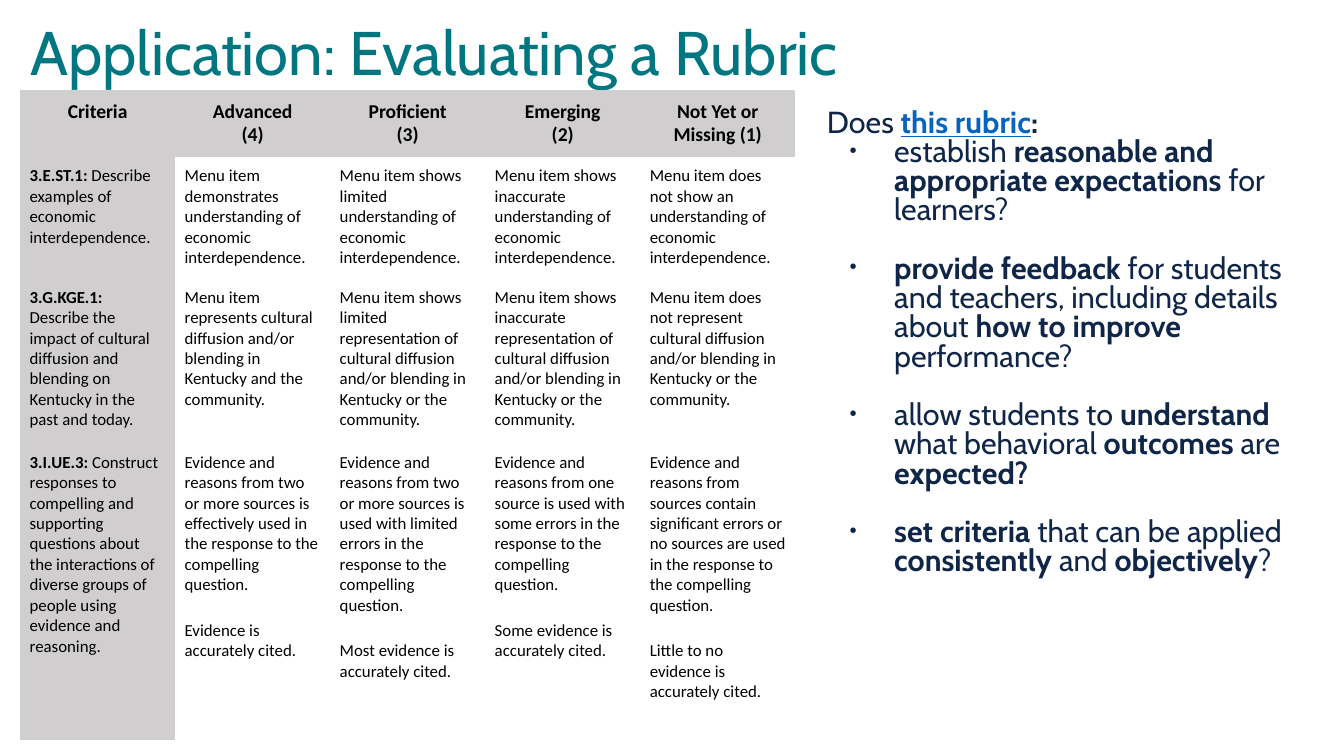
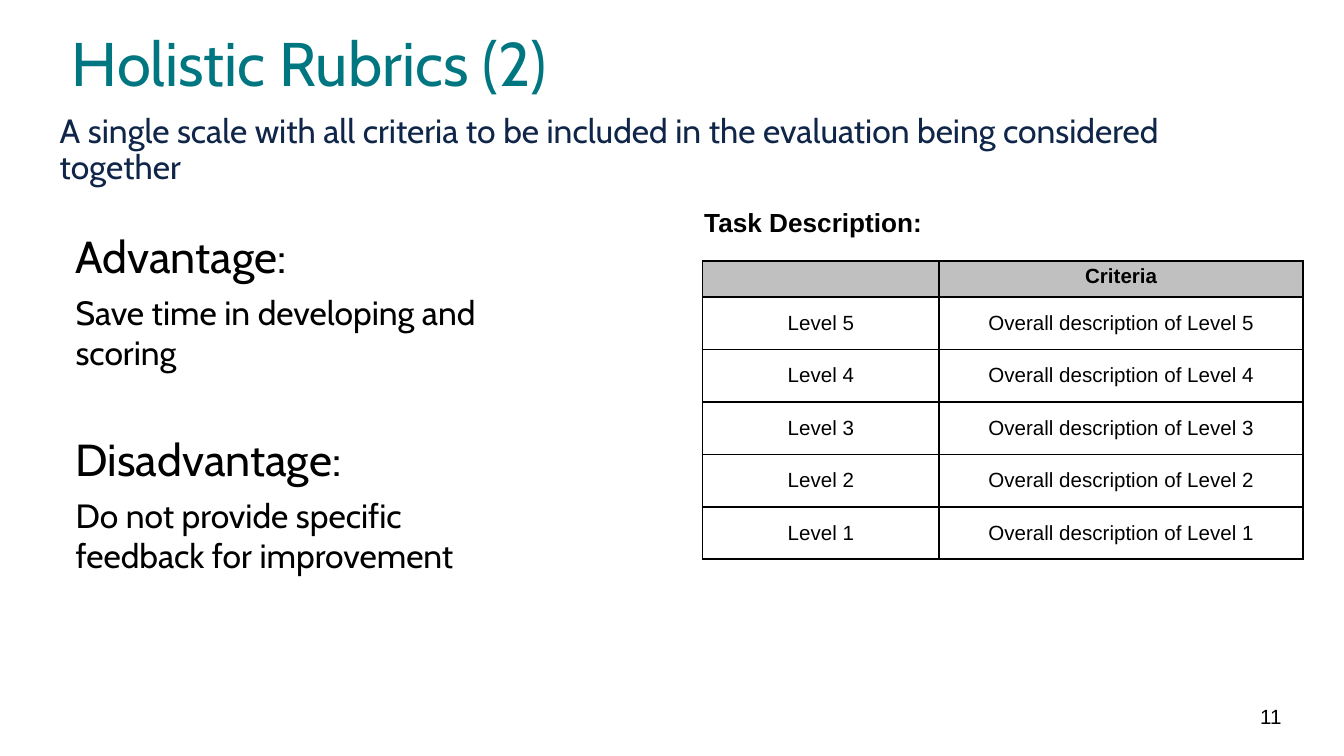
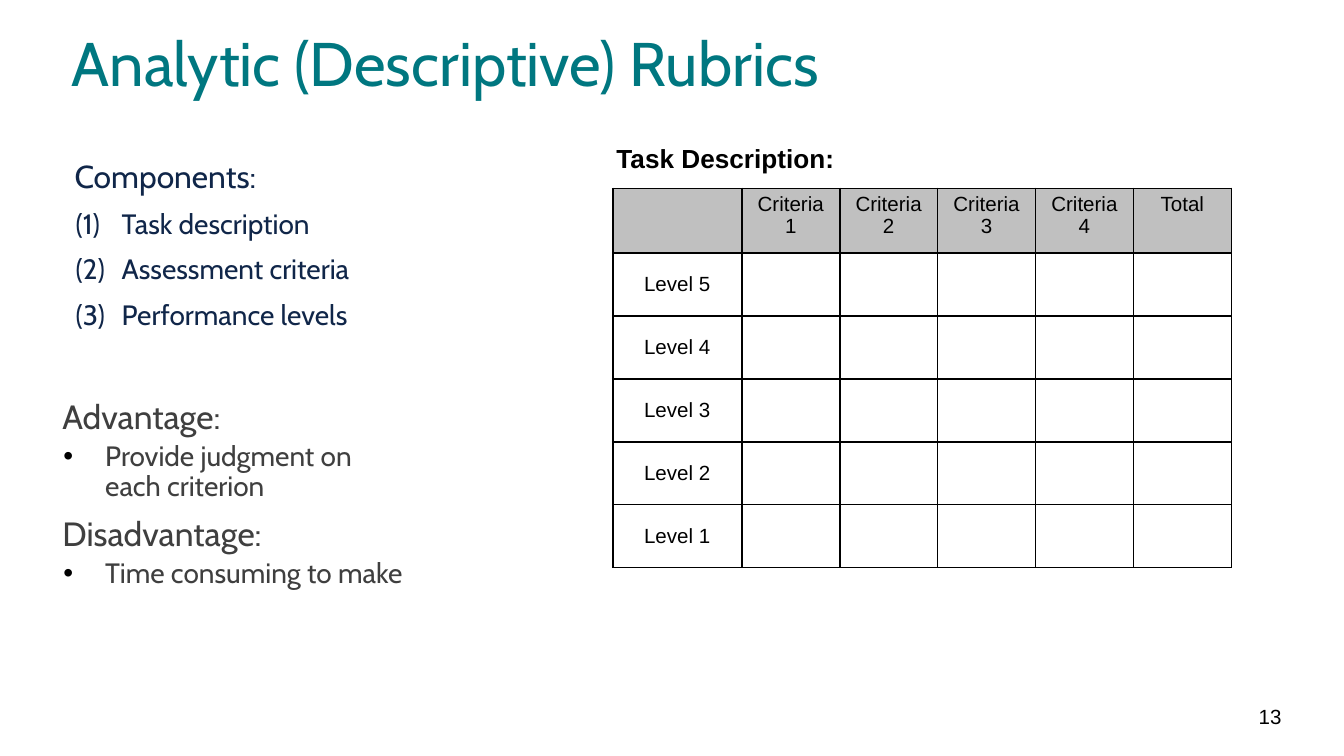
"""Build three slides on evaluating rubrics, holistic rubrics and analytic rubrics."""
import pptx
import pptx.dml.color
import pptx.enum.text
import pptx.oxml.ns
import pptx.util
from lxml import etree

Cm, Pt = pptx.util.Cm, pptx.util.Pt
RGBColor = pptx.dml.color.RGBColor
Align, Anchor = pptx.enum.text.PP_ALIGN, pptx.enum.text.MSO_ANCHOR
qn = pptx.oxml.ns.qn

TEAL = RGBColor(0x00, 0x77, 0x80)
NAVY = RGBColor(0x10, 0x26, 0x49)
LINK_BLUE = RGBColor(0x05, 0x63, 0xC1)
CHARCOAL = RGBColor(0x3F, 0x3F, 0x3F)
BLACK = RGBColor(0x00, 0x00, 0x00)
WHITE = RGBColor(0xFF, 0xFF, 0xFF)
RUBRIC_GREY = RGBColor(0xD0, 0xCE, 0xCE)
HEADER_GREY = RGBColor(0xC0, 0xC0, 0xC0)
NO_GRID_STYLE = "{2D5ABB26-0587-4C30-8999-92F81FD0307C}"
BODY_INSETS = (0.19, 0.1)


def write_text(frame, lines, font, color, insets, anchor=Anchor.TOP):
    """Write (text, size, paragraph format, bullet) lines; ** switches bold."""
    frame_format = {
        "word_wrap": True, "vertical_anchor": anchor,
        "auto_size": pptx.enum.text.MSO_AUTO_SIZE.NONE,
        "margin_left": Cm(insets[0]), "margin_right": Cm(insets[0]),
        "margin_top": Cm(insets[1]), "margin_bottom": Cm(insets[1]),
    }
    for name, value in frame_format.items():
        setattr(frame, name, value)
    for index, (text, size, layout, bullet) in enumerate(lines):
        paragraph = frame.add_paragraph() if index else frame.paragraphs[0]
        for name, value in layout.items():
            setattr(paragraph, name, value)
        if bullet:
            properties = paragraph._p.get_or_add_pPr()
            properties.set("marL", str(Cm(bullet["left"])))
            properties.set("indent", str(Cm(bullet.get("hang", 0))))
            if "color" in bullet:
                tint = etree.SubElement(properties, qn("a:buClr"))
                etree.SubElement(tint, qn("a:srgbClr"), val=str(bullet["color"]))
            if "percent" in bullet:
                etree.SubElement(properties, qn("a:buSzPct"), val=str(bullet["percent"] * 1000))
            if "number" in bullet:
                etree.SubElement(properties, qn("a:buAutoNum"), type=bullet["number"])
            if "mark" in bullet:
                etree.SubElement(properties, qn("a:buFont"), typeface="Arial")
                etree.SubElement(properties, qn("a:buChar"), char=bullet["mark"])
        if not text:
            paragraph._p.get_or_add_endParaRPr().set("sz", str(size * 100))
        for part, piece in enumerate(text.split("**")):
            if piece:
                run = paragraph.add_run()
                run.text = piece
                run_format = {"name": font, "size": Pt(size), "bold": part % 2 == 1}
                for name, value in run_format.items():
                    setattr(run.font, name, value)
                run.font.color.rgb = color


def add_grid(slide, corner, widths, heights, rows):
    """Add a plain table with the given column widths and row heights."""
    left, top = corner
    table = slide.shapes.add_table(
        len(rows), len(widths), Cm(left), Cm(top), Cm(sum(widths)), Cm(sum(heights))).table
    table._tbl.tblPr.find(qn("a:tableStyleId")).text = NO_GRID_STYLE
    for column, width in zip(table.columns, widths):
        column.width = Cm(width)
    for row, height in zip(table.rows, heights):
        row.height = Cm(height)
    return table


deck = pptx.Presentation()
deck.slide_width, deck.slide_height = Cm(25.4), Cm(14.29)

titles = [
    ("Application: Evaluating a Rubric", 0.38, 0.33),
    ("Holistic Rubrics (2)", 1.17, 0.53),
    ("Analytic (Descriptive) Rubrics", 1.17, 0.53),
]
slides = []
for heading, left, top in titles:
    slide = deck.slides.add_slide(deck.slide_layouts[5])
    title = slide.shapes.title
    title.left, title.top, title.width, title.height = Cm(left), Cm(top), Cm(17.91), Cm(2.74)
    title_layout = {"alignment": Align.LEFT, "line_spacing": 0.9}
    write_text(title.text_frame, [(heading, 33, title_layout, None)], "Cabin", TEAL, BODY_INSETS)
    slides.append(slide)
evaluating, holistic, analytic = slides

tight = {"line_spacing": 0.8}
spaced = {"line_spacing": 0.8, "space_before": Pt(15.7)}
question_mark = {"left": 1.27, "hang": -0.84, "color": NAVY, "percent": 67, "mark": "•"}
questions = [
    ("Does **this rubric****:**", 16.3, tight, None),
    ("establish **reasonable and appropriate expectations** for learners?",
     16.3, tight, question_mark),
    ("**provide feedback** for students and teachers, including details about "
     "**how to improve** performance?", 16.3, spaced, question_mark),
    ("allow students to **understand** what behavioral **outcomes** are **expected?**",
     16.3, spaced, question_mark),
    ("**set criteria** that can be applied **consistently** and **objectively**?",
     16.3, spaced, question_mark),
]
questions[0] = ("Does **this rubric**", 16.3, tight, None)

single = {"line_spacing": 0.9}
definition = [("A single scale with all criteria to be included in the evaluation "
               "being considered together", 18, single, None)]

inset = {"left": 0.3}
after_heading = {"space_before": Pt(5)}
holistic_points = [
    ("Advantage:", 24, {}, inset),
    ("Save time in developing and scoring", 18, after_heading, inset),
    ("Disadvantage:", 24, {"space_before": Pt(32)}, inset),
    ("Do not provide specific feedback for improvement", 18, after_heading, inset),
]

component_layout = {"line_spacing": 0.9, "space_before": Pt(8)}
component_number = {"left": 0.89, "hang": -0.87, "color": NAVY, "number": "arabicParenBoth"}
components = [("Components:", 17, single, None)]
for component in ("Task description", "Assessment criteria", "Performance levels"):
    components.append((component, 15, component_layout, component_number))

point_layout = {"line_spacing": 0.9, "space_before": Pt(3)}
point_mark = {"left": 0.81, "hang": -0.79, "color": BLACK, "mark": "•"}
analytic_points = [
    ("Advantage:", 18, single, None),
    ("Provide judgment on each criterion", 15, point_layout, point_mark),
    ("Disadvantage:", 18, component_layout, None),
    ("Time consuming to make", 15, point_layout, point_mark),
]

task = [("**Task Description:**", 14, {}, None)]
texts = [
    (evaluating, (15.44, 1.98, 9.17, 9.12), questions, "Cabin", NAVY, BODY_INSETS, Anchor.TOP),
    (holistic, (0.94, 2.06, 23.09, 10.16), definition, "Cabin", NAVY, BODY_INSETS, Anchor.TOP),
    (holistic, (0.94, 4.22, 9.25, 7.62), holistic_points, "Cabin", BLACK, BODY_INSETS, Anchor.TOP),
    (holistic, (13.06, 3.78, 12.7, 0.86), task, "Arial", BLACK, (0.25, 0.13), Anchor.TOP),
    (analytic, (1.22, 2.95, 19.15, 10.21), components, "Cabin", NAVY, BODY_INSETS, Anchor.TOP),
    (analytic, (0.99, 7.47, 6.99, 4.6), analytic_points, "Cabin", CHARCOAL, BODY_INSETS,
     Anchor.TOP),
    (analytic, (11.4, 2.57, 12.7, 0.86), task, "Arial", BLACK, (0.25, 0.13), Anchor.TOP),
]
for slide, page in ((holistic, "11"), (analytic, "13")):
    page_line = [(page, 11, {"alignment": Align.RIGHT}, None)]
    texts.append((slide, (22.99, 13.16, 1.42, 0.76), page_line, "Arial", BLACK, BODY_INSETS,
                  Anchor.MIDDLE))
for slide, box, lines, font, color, insets, anchor in texts:
    frame = slide.shapes.add_textbox(*[Cm(length) for length in box]).text_frame
    write_text(frame, lines, font, color, insets, anchor)
    if lines is questions:
        opening = frame.paragraphs[0]
        rubric_link = opening.runs[1]
        rubric_link.font.underline = True
        rubric_link.font.color.rgb = LINK_BLUE
        colon = opening.add_run()
        colon.text = ":"
        for name, value in {"name": font, "size": Pt(16.3), "bold": True}.items():
            setattr(colon.font, name, value)
        colon.font.color.rgb = color

rubric_rows = [
    ["**Criteria**", "**Advanced**\n**(4)**", "**Proficient**\n**(3)**",
     "**Emerging**\n**(2)**", "**Not Yet or Missing (1)**"],
    ["**3.E.ST.1:** Describe examples of economic interdependence.",
     "Menu item demonstrates understanding of economic interdependence.",
     "Menu item shows limited understanding of economic interdependence.",
     "Menu item shows inaccurate understanding of economic interdependence.",
     "Menu item does not show an understanding of economic interdependence."],
    ["**3.G.KGE.1: **Describe the impact of cultural diffusion and blending on Kentucky "
     "in the past and today.",
     "Menu item represents cultural diffusion and/or blending in Kentucky and the community.",
     "Menu item shows limited representation of cultural diffusion and/or blending in "
     "Kentucky or the community.",
     "Menu item shows inaccurate representation of cultural diffusion and/or blending in "
     "Kentucky or the community.",
     "Menu item does not represent cultural diffusion and/or blending in Kentucky or the "
     "community."],
    ["**3.I.UE.3:** Construct responses to compelling and supporting questions about the "
     "interactions of diverse groups of people using evidence and reasoning.",
     "Evidence and reasons from two or more sources is effectively used in the response to "
     "the compelling question.\nEvidence is accurately cited.",
     "Evidence and reasons from two or more sources is used with limited errors in the "
     "response to the compelling question.\nMost evidence is accurately cited.",
     "Evidence and reasons from one source is used with some errors in the response to the "
     "compelling question.\nSome evidence is accurately cited.",
     "Evidence and reasons from sources contain significant errors or no sources are used in "
     "the response to the compelling question.\nLittle to no evidence is accurately cited."],
]
rubric = add_grid(evaluating, (0.38, 1.7), [2.93] * 5, [1.24, 2.29, 3.12, 5.61], rubric_rows)
for r, row in enumerate(rubric_rows):
    for c, text in enumerate(row):
        cell = rubric.cell(r, c)
        layout = {"alignment": Align.LEFT if r else Align.CENTER}
        lines = [(line, 9 if r else 10.5, layout, None) for line in text.split("\n")]
        write_text(cell.text_frame, lines, "Calibri", BLACK, (0.18, 0.18))
        for name in ("margin_left", "margin_right", "margin_top", "margin_bottom"):
            setattr(cell, name, Cm(0.18))
        cell.fill.solid()
        cell.fill.fore_color.rgb = WHITE if r and c else RUBRIC_GREY
        if r == 3 and c:
            cell.text_frame.paragraphs[1].space_before = Pt(13.5)

levels = [f"Level {level}" for level in range(5, 0, -1)]
holistic_rows = [["", "**Criteria**"]]
holistic_rows += [[level, f"Overall description of {level}"] for level in levels]
analytic_rows = [["", "Criteria 1", "Criteria 2", "Criteria 3", "Criteria\n4", "Total"]]
analytic_rows += [[level] + [""] * 5 for level in levels]
level_grids = [
    (holistic, (13.28, 4.93), [4.47, 6.88], [0.69] + [0.99] * 5, holistic_rows),
    (analytic, (11.58, 3.56), [2.44] + [1.85] * 5, [1.22] + [1.19] * 5, analytic_rows),
]
for slide, corner, widths, heights, rows in level_grids:
    grid = add_grid(slide, corner, widths, heights, rows)
    for r, row in enumerate(rows):
        for c, text in enumerate(row):
            cell = grid.cell(r, c)
            lines = [(line, 11, {"alignment": Align.CENTER}, None) for line in text.split("\n")]
            write_text(cell.text_frame, lines, "Arial", BLACK, (0.19, 0.08))
            cell_format = {
                "vertical_anchor": Anchor.MIDDLE if r else Anchor.TOP,
                "margin_left": Cm(0.19), "margin_right": Cm(0.19),
                "margin_top": Cm(0.08), "margin_bottom": Cm(0.08),
            }
            for name, value in cell_format.items():
                setattr(cell, name, value)
            if r:
                cell.fill.background()
            else:
                cell.fill.solid()
                cell.fill.fore_color.rgb = HEADER_GREY
            properties = cell._tc.get_or_add_tcPr()
            for place, side in enumerate(("a:lnL", "a:lnR", "a:lnT", "a:lnB")):
                border = etree.Element(qn(side), w=str(Pt(1)))
                paint = etree.SubElement(border, qn("a:solidFill"))
                etree.SubElement(paint, qn("a:srgbClr"), val=str(BLACK))
                properties.insert(place, border)

deck.save("out.pptx")
